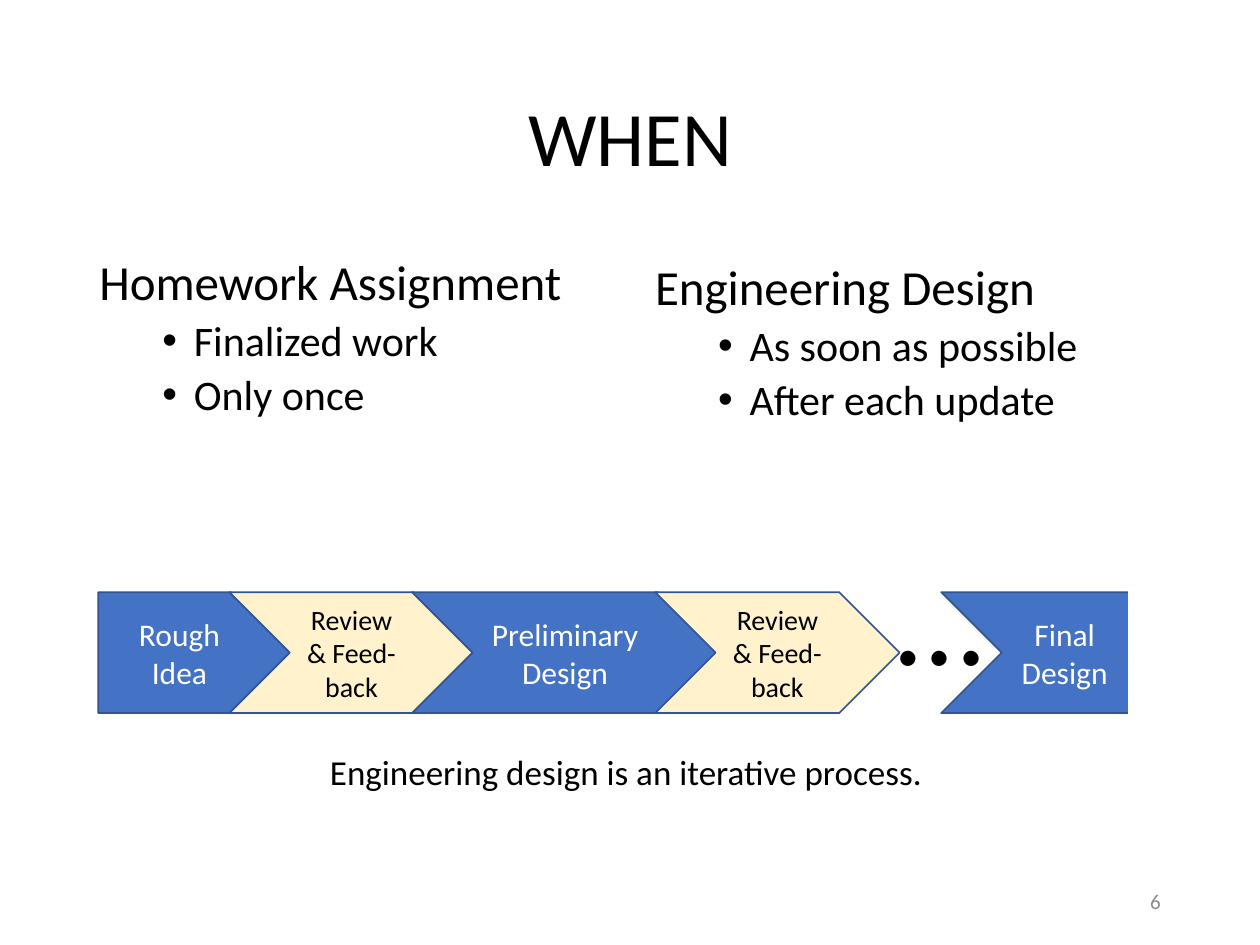
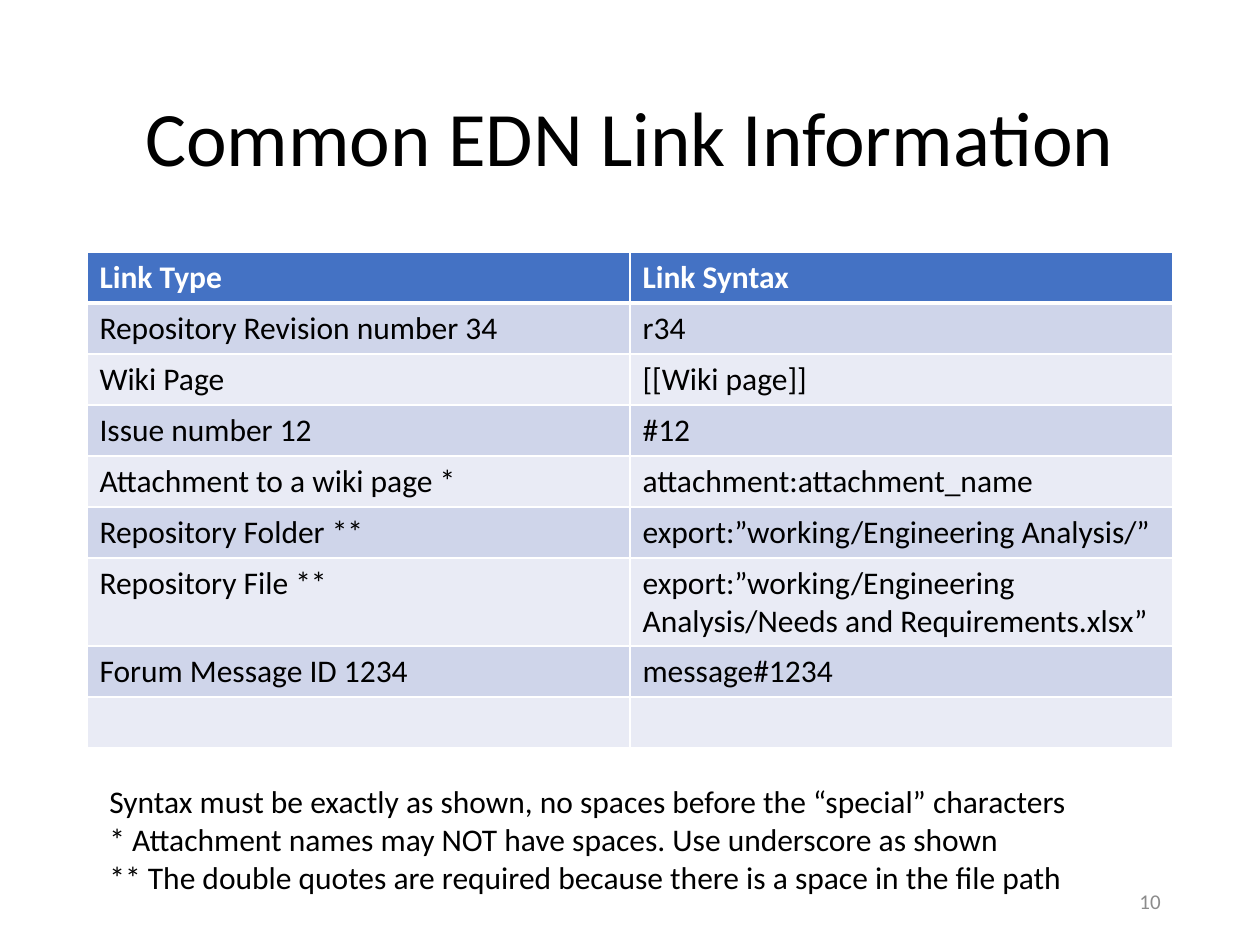
from lxml.etree import SubElement
from pptx import Presentation
from pptx.dml.color import RGBColor
from pptx.enum.shapes import MSO_SHAPE
from pptx.enum.text import MSO_ANCHOR, MSO_AUTO_SIZE, PP_ALIGN
from pptx.oxml.ns import qn
from pptx.util import Pt

PX = 4572
FONT = "Calibri"
COLORS = {
    "ink": "000000",
    "paper": "FFFFFF",
    "blue": "4472C4",
    "cream": "FFF2CC",
    "outline": "325491",
    "number": "8C8C8C",
    "odd_row": "CFD5EA",
    "even_row": "E9EBF5",
}
STEP_TOP, STEP_HEIGHT = 940, 192
REVIEW = "Review & Feed- back"
STEPS = [
    (MSO_SHAPE.PENTAGON, 156, 306, "Rough Idea"),
    (MSO_SHAPE.CHEVRON, 364, 388, REVIEW),
    (MSO_SHAPE.CHEVRON, 654, 486, "Preliminary Design"),
    (MSO_SHAPE.CHEVRON, 1040, 388, REVIEW),
    (MSO_SHAPE.CHEVRON, 1494, 392, "Final Design"),
]
LINKS = [
    ("Link Type", "Link Syntax"),
    ("Repository Revision number 34", "r34"),
    ("Wiki Page", "[[Wiki page]]"),
    ("Issue number 12", "#12"),
    ("Attachment to a wiki page *", "attachment:attachment_name"),
    ("Repository Folder **", "export:”working/Engineering Analysis/”"),
    ("Repository File **", "export:”working/Engineering Analysis/Needs and Requirements.xlsx”"),
    ("Forum Message ID 1234", "message#1234"),
    ("", ""),
]
LINK_NOTES = [
    "Syntax must be exactly as shown, no spaces before the “special” characters",
    "* Attachment names may NOT have spaces. Use underscore as shown",
    "** The double quotes are required because there is a space in the file path",
]


def color(name):
    return RGBColor.from_string(COLORS[name])


class SlideBuilder:
    def __init__(self, deck):
        self.deck = deck
        self.page = None

    def start(self, title, number):
        self.page = self.deck.slides.add_slide(self.deck.slide_layouts[6])
        heading = self.text((138, 80, 1724, 290), [title], 44,
                            align=PP_ALIGN.CENTER, anchor=MSO_ANCHOR.MIDDLE)
        heading.paragraphs[0].line_spacing = 0.9
        self.text((1412, 1390, 450, 80), [str(number)], 12, "number",
                  PP_ALIGN.RIGHT, MSO_ANCHOR.MIDDLE)

    def add_span(self, para, words, size, ink="ink", bold=False):
        span = para.add_run()
        span.text = words
        span.font.name = FONT
        span.font.size = Pt(size)
        span.font.bold = bold
        span.font.color.rgb = color(ink)

    def text(self, place, lines, size, ink="ink", align=PP_ALIGN.LEFT,
             anchor=MSO_ANCHOR.TOP, wrap=True):
        box = self.page.shapes.add_textbox(*(value * PX for value in place))
        frame = box.text_frame
        frame.word_wrap = wrap
        frame.vertical_anchor = anchor
        if not wrap:
            frame.auto_size = MSO_AUTO_SIZE.SHAPE_TO_FIT_TEXT
        for index, line in enumerate(lines):
            para = frame.add_paragraph() if index else frame.paragraphs[0]
            para.alignment = align
            self.add_span(para, line, size, ink)
        return frame

    def bullets(self, place, heading, items):
        frame = self.text(place, [heading], 28)
        frame.paragraphs[0].space_before = Pt(10)
        for item in items:
            para = frame.add_paragraph()
            para.level = 1
            para.space_before = Pt(5)
            self.add_span(para, item, 24)
            properties = para._p.get_or_add_pPr()
            properties.set("marL", str(150 * PX))
            properties.set("indent", str(-50 * PX))
            SubElement(properties, qn("a:buFont"), typeface="Arial")
            SubElement(properties, qn("a:buChar"), char="•")
        for para in frame.paragraphs:
            para.line_spacing = 0.9

    def shape(self, kind, place, fill, line, words="", size=18, ink="ink"):
        box = self.page.shapes.add_shape(kind, *(value * PX for value in place))
        box.shadow.inherit = False
        box.fill.solid()
        box.fill.fore_color.rgb = color(fill)
        box.line.color.rgb = color(line)
        box.line.width = Pt(1)
        if words:
            frame = box.text_frame
            frame.word_wrap = True
            frame.vertical_anchor = MSO_ANCHOR.MIDDLE
            para = frame.paragraphs[0]
            para.alignment = PP_ALIGN.CENTER
            self.add_span(para, words, size, ink)

    def border(self, cell, side, width):
        line = SubElement(cell._tc.get_or_add_tcPr(), qn("a:ln" + side), w=str(Pt(width)))
        fill = SubElement(line, qn("a:solidFill"))
        SubElement(fill, qn("a:srgbClr"), val=COLORS["paper"])

    def table(self, place, rows, row_height):
        frame = self.page.shapes.add_table(len(rows), len(rows[0]), *(value * PX for value in place))
        grid = frame.table
        for row_index, row in enumerate(rows):
            grid.rows[row_index].height = row_height * PX
            header = row_index == 0
            band = "odd_row" if row_index % 2 else "even_row"
            for column_index, words in enumerate(row):
                cell = grid.cell(row_index, column_index)
                for side in "LRTB":
                    thick = (row_index, side) in ((0, "B"), (1, "T"))
                    self.border(cell, side, 3 if thick else 1)
                cell.fill.solid()
                cell.fill.fore_color.rgb = color("blue" if header else band)
                if words:
                    self.add_span(cell.text_frame.paragraphs[0], words, 18,
                                  "paper" if header else "ink", header)


def add_when(builder):
    builder.start("WHEN", 6)
    builder.bullets((138, 400, 842, 404), "Homework Assignment", ["Finalized work", "Only once"])
    for kind, left, width, words in STEPS:
        review = words == REVIEW
        builder.shape(kind, (left, STEP_TOP, width, STEP_HEIGHT),
                      "cream" if review else "blue", "outline", words,
                      16 if review else 18, "ink" if review else "paper")
    builder.shape(MSO_SHAPE.RECTANGLE, (1792, 904, 138, 264), "paper", "paper")
    builder.text((1404, 846, 180, 262), ["…"], 72, wrap=False)
    builder.text((504, 1182, 990, 88), ["Engineering design is an iterative process."], 20, wrap=False)
    builder.bullets((1020, 408, 842, 404), "Engineering Design", ["As soon as possible", "After each update"])


def add_links(builder):
    builder.start("Common EDN Link Information", 10)
    builder.table((138, 400, 1724, 788), LINKS, 81)
    builder.text((154, 1232, 1572, 202), LINK_NOTES, 18, wrap=False)


def main():
    deck = Presentation()
    deck.slide_width = 2000 * PX
    deck.slide_height = 1500 * PX
    builder = SlideBuilder(deck)
    add_when(builder)
    add_links(builder)
    deck.save("out.pptx")


if __name__ == "__main__":
    main()
